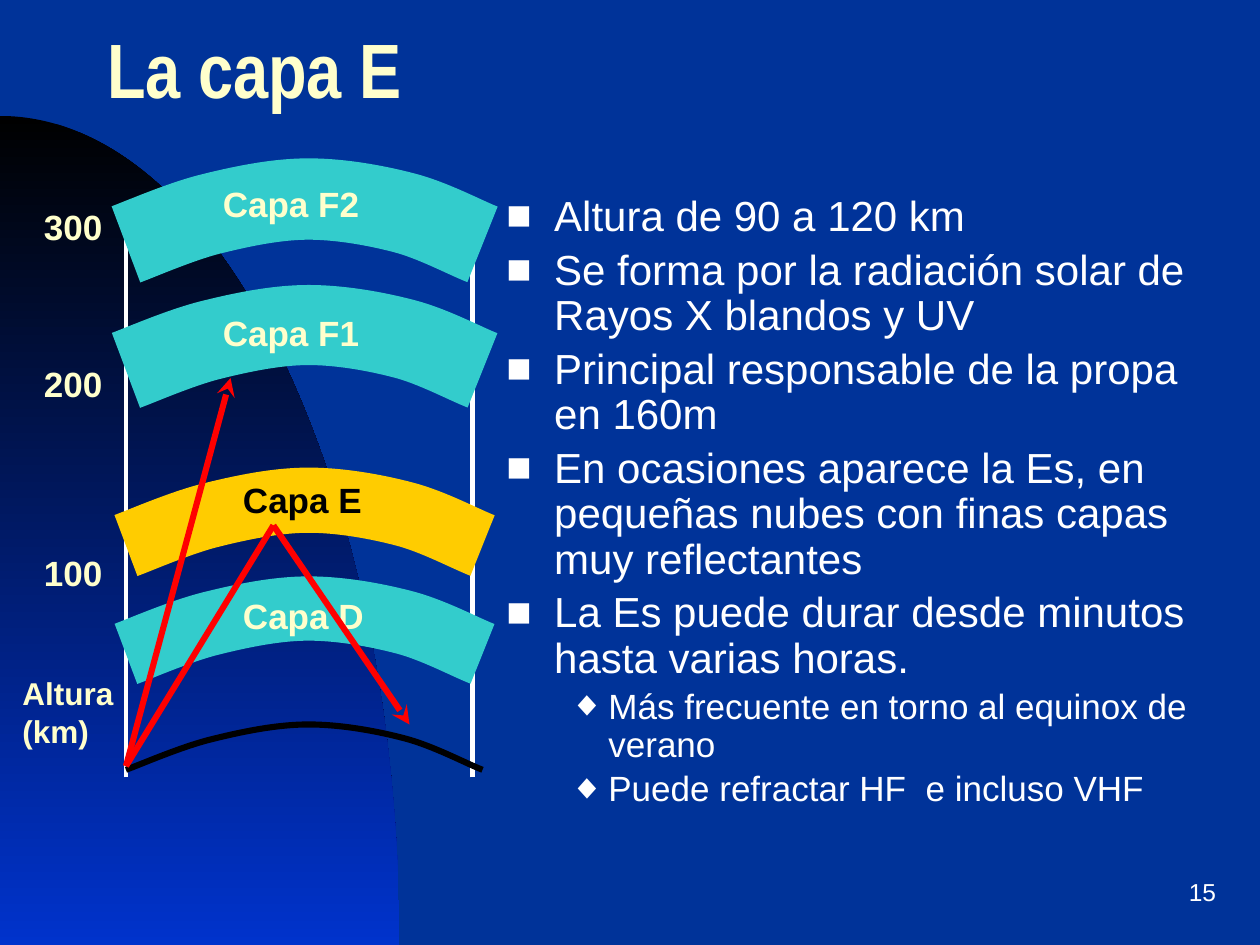
import pptx
import pptx.util
import pptx.dml.color
import pptx.enum.shapes
import pptx.enum.text
import pptx.oxml
import pptx.oxml.ns
from pptx.util import Inches

COLORS = {
    "background": "003399", "black": "000000", "glow": "0033CC",
    "cream": "FFFFCC", "white": "FFFFFF", "layer": "33CCCC",
    "highlight": "FFCC00", "ray": "FF0000",
}
TITLE = "La capa E"
PAGE_NUMBER = "15"
BULLETS = [
    (0, "Altura de 90 a 120 km"),
    (0, "Se forma por la radiación solar de Rayos X blandos y UV"),
    (0, "Principal responsable de la propa en 160m"),
    (0, "En ocasiones aparece la Es, en pequeñas nubes con finas capas muy reflectantes"),
    (0, "La Es puede durar desde minutos hasta varias horas."),
    (1, "Más frecuente en torno al equinox de verano"),
    (1, "Puede refractar HF  e incluso VHF"),
]
# Per level: character, left margin, hanging indent, text size
BULLET_STYLES = [("■", 0.38, 0.38, 24), ("◆", 0.81, 0.31, 20)]

# Top of the arc, line width, colour
ARCS = [
    (5.75, 3.5, "black"), (4.83, 36.75, "layer"), (3.97, 37.25, "highlight"),
    (2.58, 45.75, "layer"), (1.58, 46.5, "layer"),
]
# Bézier control points of an arc, measured from its top
ARC_LEFT = 1
ARC_CURVE = [
    (0, 0.36), (0.11, 0.32), (0.43, 0.18), (0.67, 0.12),
    (0.91, 0.06), (1.19, 0), (1.45, 0),
    (1.7, 0), (1.98, 0.05), (2.21, 0.11),
    (2.44, 0.17), (2.7, 0.31), (2.83, 0.36),
]
WEDGE_CURVE = [(0, 0.92), (1.75, 0.92), (3.17, 3.87), (3.17, 7.5)]
WEDGE_CORNER = (0, 7.5)

# Lines, left, top, width, height, text size, colour
LABELS = [
    (["Capa D"], 1.83, 4.67, 1.25, 0.43, 20, "cream"),
    (["100"], 0.25, 4.33, 0.75, 0.43, 20, "cream"),
    (["200"], 0.25, 2.83, 0.75, 0.43, 20, "cream"),
    (["300"], 0.25, 1.58, 0.75, 0.43, 20, "cream"),
    (["Altura", "(km)"], 0.08, 5.3, 1.25, 0.7, 18, "cream"),
    (["Capa E"], 1.83, 3.75, 1.25, 0.43, 20, "black"),
    (["Capa F1"], 1.67, 2.42, 1.67, 0.43, 20, "cream"),
    (["Capa F2"], 1.67, 1.4, 1.67, 0.43, 20, "cream"),
]
TRANSMITTER, REFLECTION = (1, 6.08), (2.17, 4.17)
# Start, end, has an arrowhead
RAYS = [
    (TRANSMITTER, (1.83, 3), True),
    (TRANSMITTER, REFLECTION, False),
    (REFLECTION, (3.25, 5.75), True),
]


def rgb(name):
    return pptx.dml.color.RGBColor.from_string(COLORS[name])


def new_element(tag, **attributes):
    element = pptx.oxml.parse_xml(f'<a:{tag} {pptx.oxml.ns.nsdecls("a")}/>')
    for key, value in attributes.items():
        element.set(key, value)
    return element


def add_xml(parent, tag, **attributes):
    element = new_element(tag, **attributes)
    parent.append(element)
    return element


def add_curve(slide, controls, corners=()):
    """Draw chained cubic Béziers, closed through the corners if there are any."""
    points = [(Inches(x), Inches(y)) for x, y in [*controls, *corners]]
    builder = slide.shapes.build_freeform(*points[0])
    builder.add_line_segments(points[1:], close=bool(corners))
    shape = builder.convert_to_shape()
    shape.shadow.inherit = False
    segments = list(shape._element.iter(pptx.oxml.ns.qn("a:lnTo")))
    for first in range(0, len(controls) - 1, 3):
        curve = new_element("cubicBezTo")
        segments[first].addprevious(curve)
        for segment in segments[first:first + 3]:
            curve.append(segment[0])
            segment.getparent().remove(segment)
    return shape


def add_wedge(slide):
    shape = add_curve(slide, WEDGE_CURVE, [WEDGE_CORNER])
    shape.line.fill.background()
    shape.fill.gradient()
    shape.fill.gradient_angle = 270
    for stop, name in zip(shape.fill.gradient_stops, ("black", "glow")):
        stop.color.rgb = rgb(name)


def add_arc(slide, top, width, color):
    shape = add_curve(slide, [(ARC_LEFT + x, top + y) for x, y in ARC_CURVE])
    shape.fill.background()
    shape.line.color.rgb = rgb(color)
    shape.line.width = pptx.util.Pt(width)


def add_line(slide, start, end, color, width, arrow=False):
    connector = slide.shapes.add_connector(
        pptx.enum.shapes.MSO_CONNECTOR.STRAIGHT, *map(Inches, start + end))
    connector.line.color.rgb = rgb(color)
    connector.line.width = pptx.util.Pt(width)
    if arrow:
        add_xml(connector.line._get_or_add_ln(), "tailEnd", type="stealth")
    add_xml(connector._element.spPr, "effectLst")


def add_text_box(slide, left, top, width, height):
    frame = slide.shapes.add_textbox(*map(Inches, (left, top, width, height))).text_frame
    frame.word_wrap = True
    return frame


def add_paragraph(frame, index):
    return frame.add_paragraph() if index else frame.paragraphs[0]


def add_run(paragraph, text, size, color, bold=False, font="Arial"):
    run = paragraph.add_run()
    run.text = text
    run.font.name = font
    run.font.size = pptx.util.Pt(size)
    run.font.bold = bold
    run.font.color.rgb = rgb(color)


def add_title(slide):
    title = slide.shapes.title
    title.left, title.top, title.width, title.height = map(Inches, (0.75, 0, 9.25, 1.25))
    title.text_frame.vertical_anchor = pptx.enum.text.MSO_ANCHOR.MIDDLE
    paragraph = title.text_frame.paragraphs[0]
    paragraph.alignment = pptx.enum.text.PP_ALIGN.LEFT
    paragraph.line_spacing = 0.7
    add_run(paragraph, TITLE, 44, "cream", True, "Arial Narrow")


def add_bullets(slide):
    frame = add_text_box(slide, 3.92, 1.5, 5.92, 5.75)
    for index, (level, text) in enumerate(BULLETS):
        character, margin, hanging, size = BULLET_STYLES[level]
        paragraph = add_paragraph(frame, index)
        paragraph.level = level
        paragraph.line_spacing = 0.9
        paragraph.space_before = pptx.util.Pt(size * 0.2)
        properties = paragraph._p.get_or_add_pPr()
        properties.set("marL", str(Inches(margin)))
        properties.set("indent", str(-Inches(hanging)))
        add_xml(add_xml(properties, "buClr"), "srgbClr", val=COLORS["white"])
        add_xml(properties, "buFont", typeface="Arial")
        add_xml(properties, "buChar", char=character)
        add_run(paragraph, text, size, "white")


def main():
    presentation = pptx.Presentation()
    presentation.slide_width, presentation.slide_height = Inches(10), Inches(7.5)
    slide = presentation.slides.add_slide(presentation.slide_layouts[5])
    slide.background.fill.solid()
    slide.background.fill.fore_color.rgb = rgb("background")

    add_wedge(slide)
    add_title(slide)
    for x in (3.75, 1):
        add_line(slide, (x, 6.17), (x, 1.75), "white", 2.75)
    for arc in ARCS:
        add_arc(slide, *arc)
    for lines, left, top, width, height, size, color in LABELS:
        frame = add_text_box(slide, left, top, width, height)
        for index, text in enumerate(lines):
            add_run(add_paragraph(frame, index), text, size, color, True)
    for start, end, arrow in RAYS:
        add_line(slide, start, end, "ray", 3.5, arrow)
    add_bullets(slide)

    frame = add_text_box(slide, 7.67, 6.83, 2.08, 0.5)
    frame.vertical_anchor = pptx.enum.text.MSO_ANCHOR.MIDDLE
    frame.paragraphs[0].alignment = pptx.enum.text.PP_ALIGN.RIGHT
    add_run(frame.paragraphs[0], PAGE_NUMBER, 14, "white")

    presentation.save("out.pptx")


if __name__ == "__main__":
    main()
